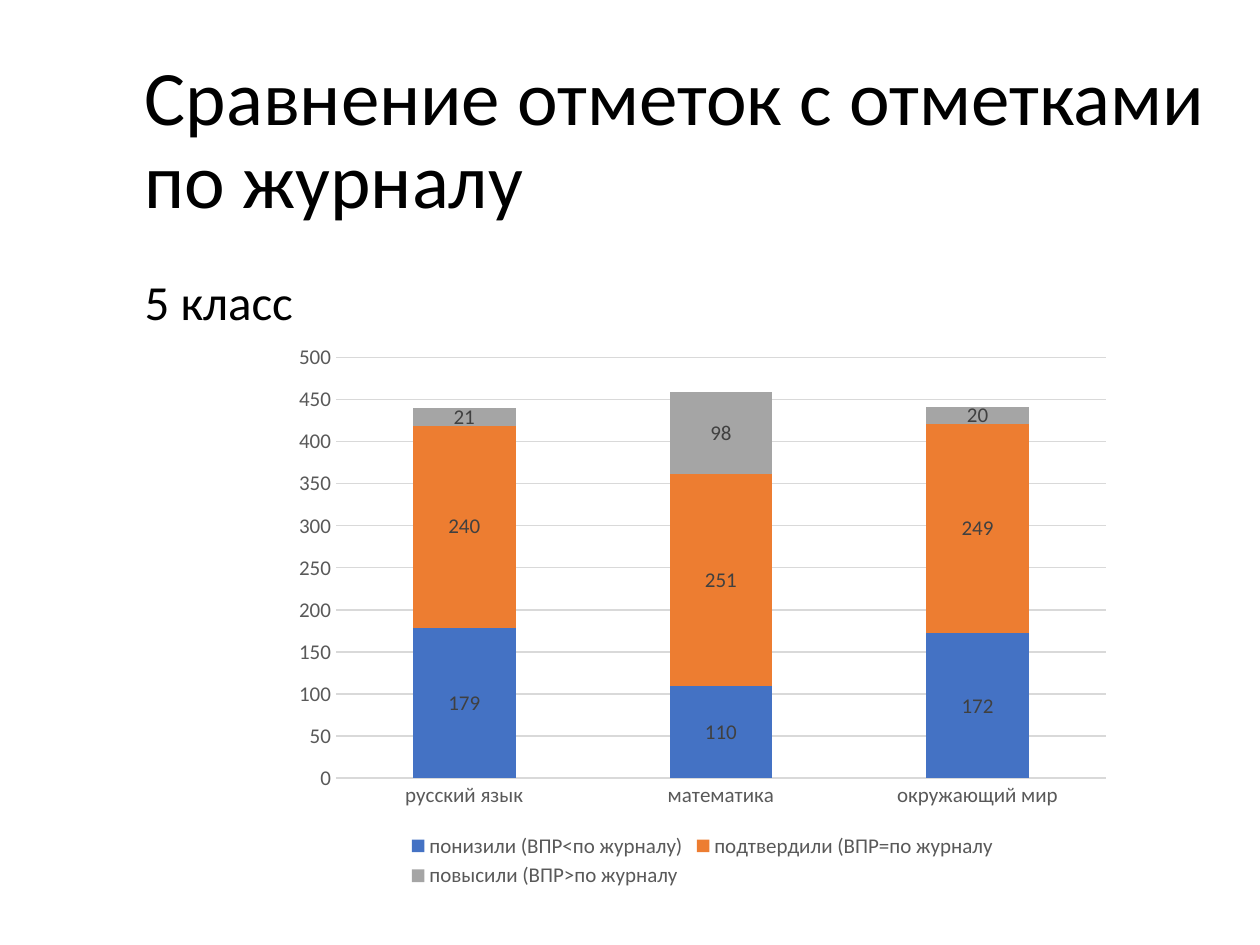
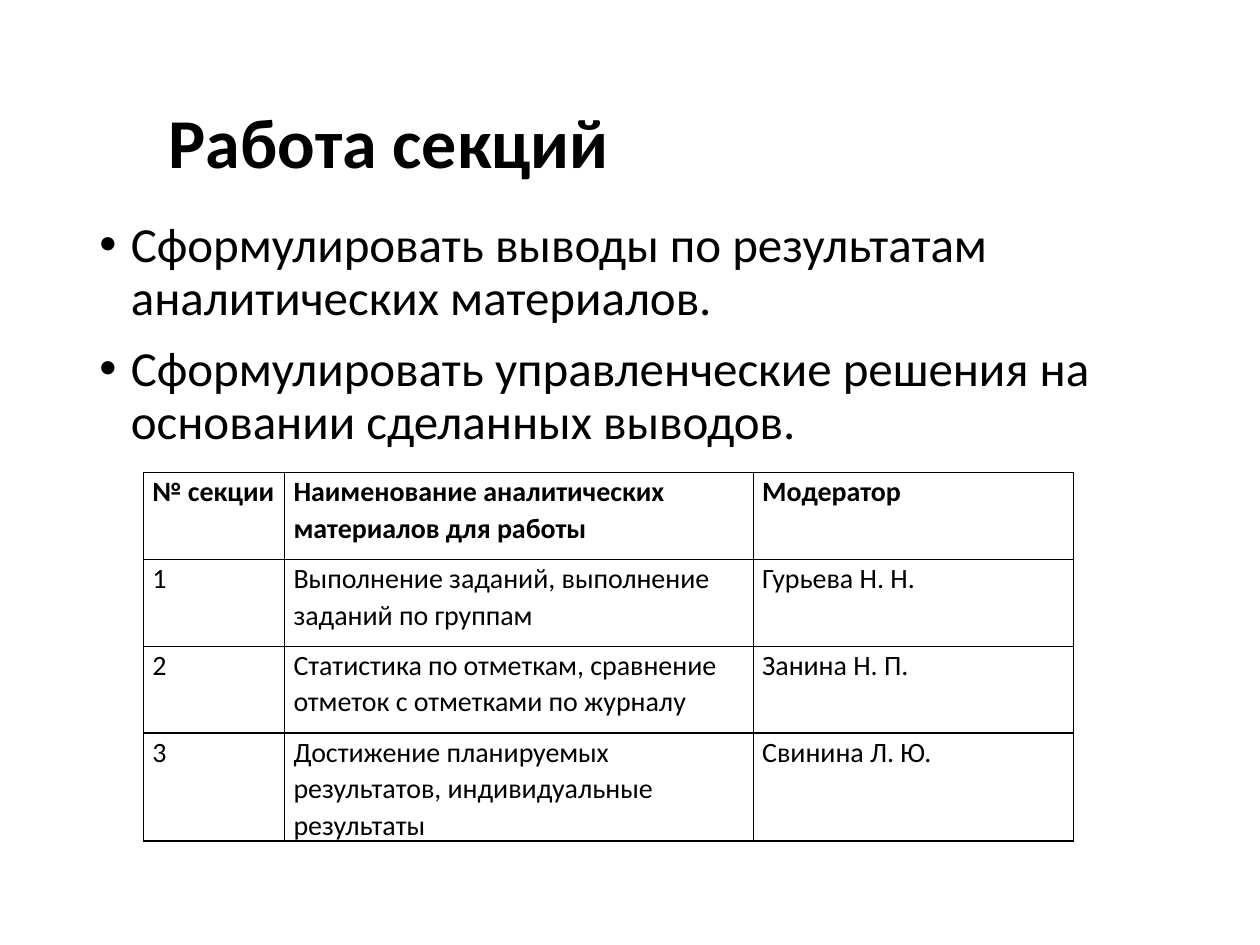
from lxml.etree import SubElement
from pptx import Presentation
from pptx.chart.data import CategoryChartData
from pptx.dml.color import RGBColor
from pptx.enum.chart import XL_CHART_TYPE as ChartType
from pptx.enum.chart import XL_LEGEND_POSITION as LegendPosition
from pptx.enum.chart import XL_TICK_MARK as TickMark
from pptx.enum.text import MSO_ANCHOR as Anchor
from pptx.oxml import parse_xml
from pptx.oxml.ns import nsdecls, qn
from pptx.util import Pt

PX = 9144  # EMU per px, 100 px to the inch


def px(length):
    return length * PX


def color(hex_string):
    return RGBColor.from_string(hex_string)


class Deck:
    FONT = "Calibri"
    TEXT = "000000"
    AXIS_TEXT = "595959"
    LABEL_TEXT = "404040"
    GRID = "D9D9D9"
    BODY_SIZE = 28
    CHART_SIZE = 12
    TABLE_SIZE = 16

    def __init__(self, width, height):
        self.presentation = Presentation()
        self.presentation.slide_width = px(width)
        self.presentation.slide_height = px(height)
        self.slide = None

    def new_slide(self):
        self.slide = self.presentation.slides.add_slide(self.presentation.slide_layouts[6])

    def set_font(self, font, size, hex_string=TEXT, bold=False):
        font.name = self.FONT
        font.size = Pt(size)
        font.bold = bold
        font.color.rgb = color(hex_string)

    # Text
    def text(self, box, lines, size=BODY_SIZE, bold=False, anchor=Anchor.TOP, bulleted=False):
        shape = self.slide.shapes.add_textbox(*map(px, box))
        frame = shape.text_frame
        frame.word_wrap = True
        frame.vertical_anchor = anchor
        for index, line in enumerate(lines):
            paragraph = frame.paragraphs[0] if index == 0 else frame.add_paragraph()
            paragraph.text = line
            paragraph.line_spacing = 0.9
            if index > 0:
                paragraph.space_before = Pt(10)
            if bulleted:
                self.bullet(paragraph)
            self.set_font(paragraph.font, size, bold=bold)

    def bullet(self, paragraph, indent=25):
        properties = paragraph._p.get_or_add_pPr()
        properties.set("marL", str(px(indent)))
        properties.set("indent", str(-px(indent)))
        SubElement(properties, qn("a:buFont")).set("typeface", "Arial")
        SubElement(properties, qn("a:buChar")).set("char", "•")

    def title(self, box, line, size, bold=False):
        self.text(box, [line], size, bold, Anchor.MIDDLE)

    # Chart
    def stacked_chart(self, box, categories, series_rows):
        data = CategoryChartData()
        data.categories = categories
        for name, values, _ in series_rows:
            data.add_series(name, values)
        chart = self.slide.shapes.add_chart(ChartType.COLUMN_STACKED, *map(px, box), data).chart
        self.set_font(chart.font, self.CHART_SIZE, self.AXIS_TEXT)
        chart.has_title = False

        plot = chart.plots[0]
        plot.gap_width = 150
        plot.overlap = 100
        plot.vary_by_categories = False
        for series, (_, _, fill) in zip(plot.series, series_rows):
            series.format.fill.solid()
            series.format.fill.fore_color.rgb = color(fill)
            labels = series.data_labels
            labels.show_value = True
            self.set_font(labels.font, self.CHART_SIZE, self.LABEL_TEXT)

        for axis in (chart.category_axis, chart.value_axis):
            axis.major_tick_mark = axis.minor_tick_mark = TickMark.NONE
            self.set_font(axis.tick_labels.font, self.CHART_SIZE, self.AXIS_TEXT)
        value_axis = chart.value_axis
        value_axis.minimum_scale, value_axis.maximum_scale = 0, 500
        value_axis.major_unit = 50
        value_axis.format.line.fill.background()
        for line in (chart.category_axis.format.line, value_axis.major_gridlines.format.line):
            line.color.rgb = color(self.GRID)
            line.width = Pt(0.75)

        chart.has_legend = True
        chart.legend.position = LegendPosition.BOTTOM
        chart.legend.include_in_layout = False
        self.set_font(chart.legend.font, self.CHART_SIZE, self.AXIS_TEXT)

    # Table
    def table(self, left, top, widths, row_height, rows):
        frame = self.slide.shapes.add_table(
            len(rows), len(widths), px(left), px(top), px(sum(widths)), px(row_height * len(rows)))
        table = frame.table
        table.first_row = table.horz_banding = False
        for column, width in zip(table.columns, widths):
            column.width = px(width)
        for row_index, row in enumerate(rows):
            table.rows[row_index].height = px(row_height)
            for column_index, content in enumerate(row):
                self.fill_cell(table.cell(row_index, column_index), content, bold=row_index == 0)

    def fill_cell(self, cell, content, bold):
        cell.margin_left = cell.margin_right = px(7)
        cell.margin_top = cell.margin_bottom = 0
        cell.fill.background()
        self.cell_borders(cell)
        paragraph = cell.text_frame.paragraphs[0]
        paragraph.text = content
        paragraph.line_spacing = 1.07
        self.set_font(paragraph.font, self.TABLE_SIZE, bold=bold)

    def cell_borders(self, cell):
        properties = cell._tc.get_or_add_tcPr()
        for index, side in enumerate("LRTB"):
            properties.insert(index, parse_xml(
                f'<a:ln{side} {nsdecls("a")} w="{Pt(1)}"><a:solidFill>'
                f'<a:srgbClr val="{self.TEXT}"/></a:solidFill></a:ln{side}>'))


def main():
    deck = Deck(1000, 750)

    # Slide 1: marks compared with the class register
    deck.new_slide()
    deck.title((105, 40, 862, 145), "Сравнение отметок с отметками по журналу", 44)
    deck.text((105, 216, 862, 65), ["5 класс"])
    deck.stacked_chart(
        (224, 265, 667, 444),
        ["русский язык", "математика", "окружающий мир"],
        [
            ("понизили (ВПР<по журналу)", (179, 110, 172), "4472C4"),
            ("подтвердили (ВПР=по журналу", (240, 251, 249), "ED7D31"),
            ("повысили (ВПР>по журналу", (21, 98, 20), "A5A5A5"),
        ])

    # Slide 2: work of the sections
    deck.new_slide()
    deck.title((124, 55, 818, 122), "Работа секций", 40, bold=True)
    deck.text((69, 170, 862, 205), [
        "Сформулировать выводы по результатам аналитических материалов.",
        "Сформулировать управленческие решения на основании сделанных выводов.",
    ], bulleted=True)
    deck.table(114, 375, (112, 372, 254), 69, [
        ("№ секции", "Наименование аналитических материалов для работы", "Модератор"),
        ("1", "Выполнение заданий, выполнение заданий по группам", "Гурьева Н. Н."),
        ("2", "Статистика по отметкам, сравнение отметок с отметками по журналу", "Занина Н. П."),
        ("3", "Достижение планируемых результатов, индивидуальные результаты", "Свинина Л. Ю."),
    ])

    deck.presentation.save("out.pptx")


if __name__ == "__main__":
    main()
